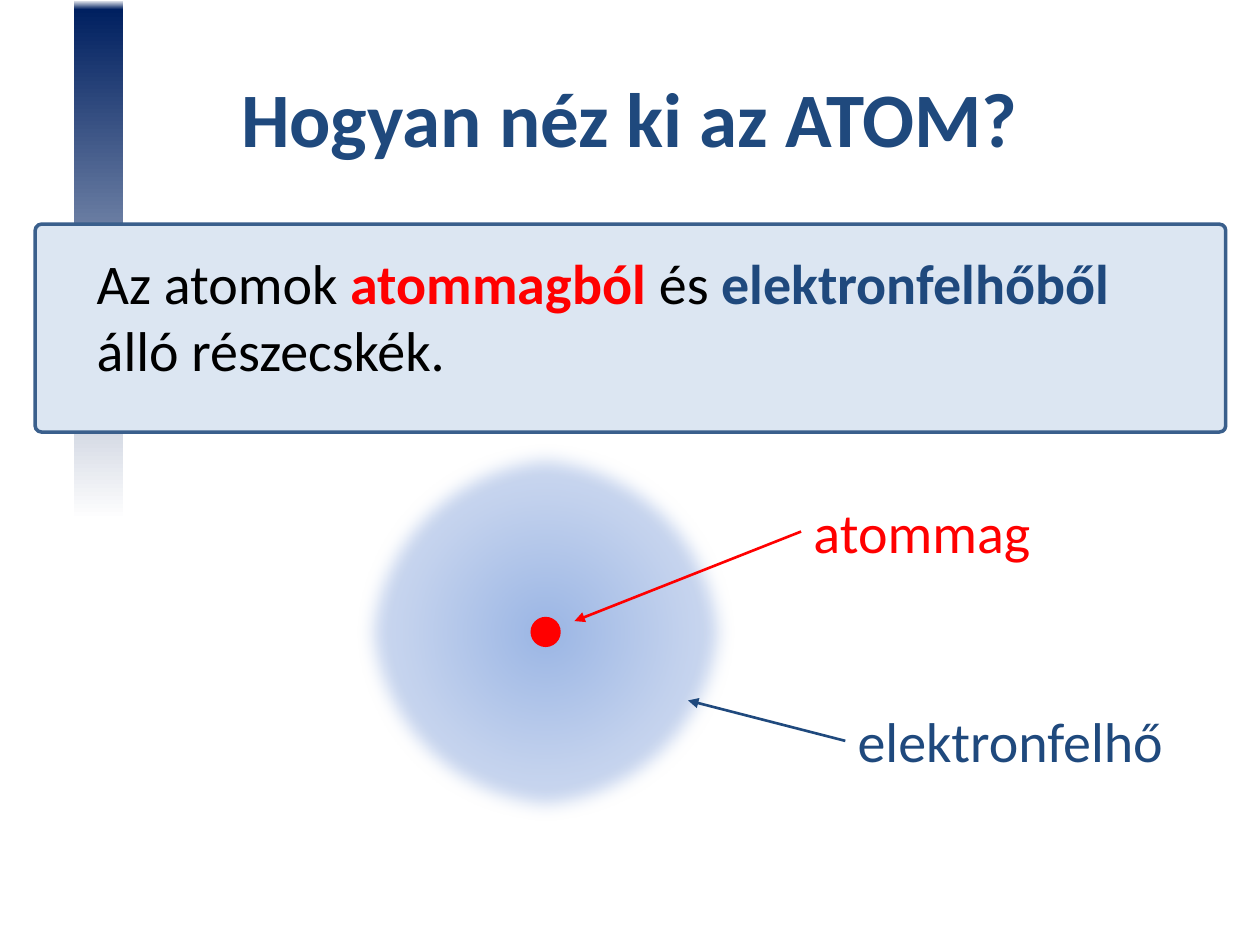
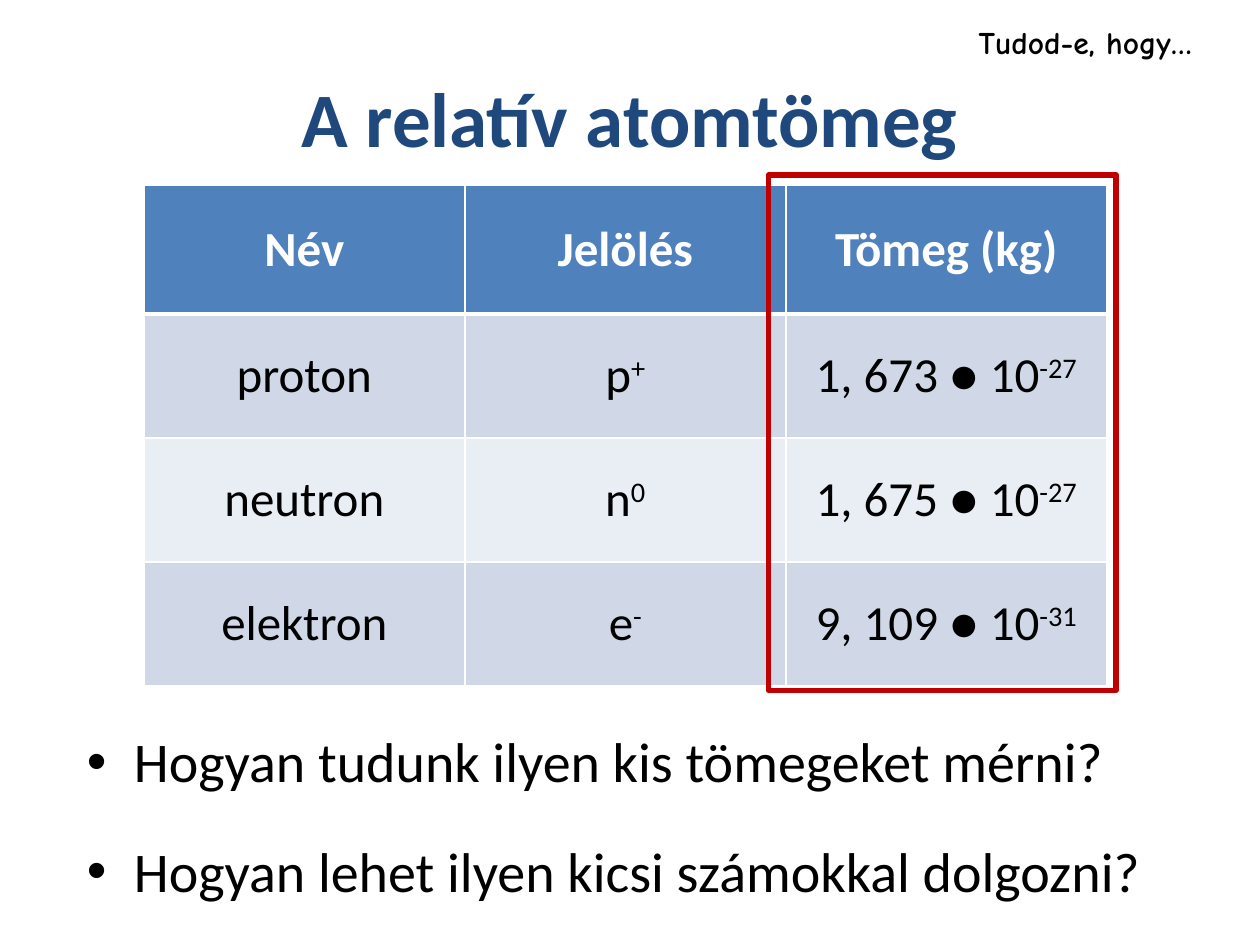
from dataclasses import dataclass
from typing import NamedTuple, Optional

import lxml.etree
import pptx
import pptx.dml.color
import pptx.enum.shapes
import pptx.enum.text
import pptx.oxml.ns
import pptx.util

Cm = pptx.util.Cm
Pt = pptx.util.Pt
SHAPES = pptx.enum.shapes.MSO_SHAPE
ALIGN = pptx.enum.text.PP_ALIGN
ANCHOR = pptx.enum.text.MSO_ANCHOR

COLORS = {
    "black": "000000", "white": "FFFFFF", "red": "FF0000", "blue": "1F497D",
    "navy": "002060", "panel": "DCE6F2", "panel edge": "3A5F8C",
    "cloud core": "9AB5E4", "cloud middle": "C2D1ED", "cloud rim": "E1E8F5",
    "header": "4F81BD", "band dark": "D0D8E8", "band light": "E9EDF4",
    "frame": "C00000",
}
BODY_FONT = "Calibri"
NOTE_FONT = "Comic Neue"
BODY_SIZE = 32


class Area(NamedTuple):
    """Left, top, width and height in centimetres."""
    left: float
    top: float
    width: float
    height: float

    def lengths(self) -> list:
        return [Cm(value) for value in self]


class Span(NamedTuple):
    text: str
    color: str = "black"
    bold: bool = False
    raised: bool = False


@dataclass
class TextStyle:
    size: float = BODY_SIZE
    font: str = BODY_FONT
    align: object = ALIGN.LEFT
    before: float = 0
    after: float = 0
    bullet: Optional[str] = None


@dataclass
class Label:
    """A caption with an arrow from its left edge to the part it names."""
    text: str
    color: str
    area: Area
    target: tuple[float, float]


TITLE_AREA = Area(1.27, 0.76, 22.86, 3.18)
TITLE_STYLE = TextStyle(size=44, align=ALIGN.CENTER)

LABELS = [
    Label("atommag", "red", Area(16.15, 9.9, 4.93, 1.63), (11.58, 12.52)),
    Label("elektronfelhő", "blue", Area(17.04, 14.12, 6.73, 1.63), (13.87, 14.12)),
]

HEADINGS = ["Név", "Jelölés", "Tömeg (kg)"]
PARTICLES = [
    ("proton", "p", "+", "1, 673 ● 10", "-27"),
    ("neutron", "n", "0", "1, 675 ● 10", "-27"),
    ("elektron", "e", "-", "9, 109 ● 10", "-31"),
]
QUESTIONS = [
    "Hogyan tudunk ilyen kis tömegeket mérni?",
    "Hogyan lehet ilyen kicsi számokkal dolgozni?",
]


def rgb(name: str):
    return pptx.dml.color.RGBColor.from_string(COLORS[name])


def add_node(parent, tag: str, **attributes):
    values = {key: str(value) for key, value in attributes.items()}
    return lxml.etree.SubElement(parent, pptx.oxml.ns.qn(tag), values)


def write_spans(para, spans: list[Span], style: TextStyle) -> None:
    para.text = spans[0].text
    for span in spans[1:]:
        para.add_run().text = span.text
    para.alignment = style.align
    para.space_before, para.space_after = Pt(style.before), Pt(style.after)
    for run, span in zip(para.runs, spans):
        run.font.size = Pt(style.size)
        run.font.name = style.font
        run.font.bold = span.bold
        run.font.color.rgb = rgb(span.color)
        if span.raised:
            run.font._element.set("baseline", "30000")
    if style.bullet:
        properties = para._p.get_or_add_pPr()
        indent = Cm(0.95)
        properties.set("marL", str(indent))
        properties.set("indent", str(-indent))
        add_node(properties, "a:buFont", typeface="Arial")
        add_node(properties, "a:buChar", char=style.bullet)


def add_text(page, area: Area, lines: list[list[Span]], style: TextStyle,
             anchor=ANCHOR.TOP, wrap: bool = True):
    box = page.shapes.add_textbox(*area.lengths())
    frame = box.text_frame
    frame.word_wrap = wrap
    frame.vertical_anchor = anchor
    for index, spans in enumerate(lines):
        para = frame.add_paragraph() if index else frame.paragraphs[0]
        write_spans(para, spans, style)
    return box


def add_title(page, text: str) -> None:
    add_text(page, TITLE_AREA, [[Span(text, "blue", True)]], TITLE_STYLE, ANCHOR.MIDDLE)


def add_figure(shapes, kind, area: Area, fill: Optional[str] = None,
               line: Optional[str] = None, width: float = 0):
    figure = shapes.add_shape(kind, *area.lengths())
    figure.shadow.inherit = False
    if fill:
        figure.fill.solid()
        figure.fill.fore_color.rgb = rgb(fill)
    else:
        figure.fill.background()
    if line:
        figure.line.color.rgb = rgb(line)
        figure.line.width = Pt(width)
    else:
        figure.line.fill.background()
    return figure


def set_gradient(figure, stops: list[tuple[int, str]], angle: Optional[int] = None) -> None:
    """Give a linear gradient, or one spreading from the centre without an angle."""
    properties = figure._element.spPr
    gradient = add_node(properties, "a:gradFill", rotWithShape=1)
    stop_list = add_node(gradient, "a:gsLst")
    for position, color in stops:
        stop = add_node(stop_list, "a:gs", pos=position * 1000)
        add_node(stop, "a:srgbClr", val=COLORS[color])
    if angle is None:
        circle = add_node(gradient, "a:path", path="circle")
        add_node(circle, "a:fillToRect", l=50000, t=50000, r=50000, b=50000)
    else:
        add_node(gradient, "a:lin", ang=angle * 60000, scaled=0)
    properties.replace(properties.find(pptx.oxml.ns.qn("a:noFill")), gradient)


def soften_edge(figure, radius: int) -> None:
    effects = figure._element.spPr.find(pptx.oxml.ns.qn("a:effectLst"))
    add_node(effects, "a:softEdge", rad=radius)


def add_label(page, label: Label) -> None:
    add_text(page, label.area, [[Span(label.text, label.color)]], TextStyle(), wrap=False)
    start = (label.area.left, label.area.top + label.area.height / 2)
    arrow = page.shapes.add_connector(
        pptx.enum.shapes.MSO_CONNECTOR.STRAIGHT,
        *[Cm(value) for value in start + label.target])
    arrow.line.color.rgb = rgb(label.color)
    arrow.line.width = Pt(1.5)
    add_node(arrow.line._get_or_add_ln(), "a:tailEnd", type="triangle")
    add_node(arrow._element.spPr, "a:effectLst")


def add_atom(page) -> None:
    atom = page.shapes.add_group_shape()
    center_x, center_y = 11.0, 12.74

    def add_disc(diameter: float, fill: Optional[str] = None):
        area = Area(center_x - diameter / 2, center_y - diameter / 2, diameter, diameter)
        return add_figure(atom.shapes, SHAPES.OVAL, area, fill)

    cloud = add_disc(7.65)
    set_gradient(cloud, [(0, "cloud core"), (50, "cloud middle"), (100, "cloud rim")])
    soften_edge(cloud, Pt(10))
    add_disc(0.61, "red")


def set_borders(cell, bottom: float) -> None:
    properties = cell._tc.get_or_add_tcPr()
    widths = {"a:lnL": 1, "a:lnR": 1, "a:lnT": 1, "a:lnB": bottom}
    for index, (tag, width) in enumerate(widths.items()):
        border = add_node(properties, tag, w=Pt(width))
        add_node(add_node(border, "a:solidFill"), "a:srgbClr", val=COLORS["white"])
        properties.insert(index, border)


def add_particle_table(page) -> None:
    rows = [[[Span(heading, "white", True)] for heading in HEADINGS]]
    for name, symbol, charge, mass, power in PARTICLES:
        rows.append([[Span(name)],
                     [Span(symbol), Span(charge, raised=True)],
                     [Span(mass), Span(power, raised=True)]])
    area = Area(2.9, 3.73, 19.41, 10.11)
    table = page.shapes.add_table(len(rows), len(HEADINGS), *area.lengths()).table
    for column in table.columns:
        column.width = Cm(area.width / len(HEADINGS))
    style = TextStyle(size=28, align=ALIGN.CENTER)
    for row_index, row in enumerate(rows):
        table.rows[row_index].height = Cm(2.5 if row_index else 2.6)
        fill = ("band dark" if row_index % 2 else "band light") if row_index else "header"
        for column_index, spans in enumerate(row):
            cell = table.cell(row_index, column_index)
            cell.fill.solid()
            cell.fill.fore_color.rgb = rgb(fill)
            cell.vertical_anchor = ANCHOR.MIDDLE
            write_spans(cell.text_frame.paragraphs[0], spans, style)
            set_borders(cell, 1 if row_index else 3)


def build_atom_page(page) -> None:
    bar = add_figure(page.shapes, SHAPES.RECTANGLE, Area(1.5, 0, 0.99, 19.05))
    set_gradient(bar, [(45, "white"), (99, "navy"), (100, "white")], angle=270)
    panel = add_figure(page.shapes, SHAPES.ROUNDED_RECTANGLE, Area(0.71, 4.52, 24, 4.19),
                       "panel", "panel edge", 2)
    panel.adjustments[0] = 0.03
    add_title(page, "Hogyan néz ki az ATOM?")
    definition = [Span("Az atomok "), Span("atommagból ", "red", True), Span("és "),
                  Span("elektronfelhőből ", "blue", True), Span("álló részecskék.")]
    add_text(page, Area(1.7, 4.88, 22, 4.06), [definition], TextStyle(before=6.4))
    add_atom(page)
    for label in LABELS:
        add_label(page, label)


def build_mass_page(page) -> None:
    add_title(page, "A relatív atomtömeg")
    add_text(page, Area(1.5, 14.53, 22.4, 4.52), [[Span(text)] for text in QUESTIONS],
             TextStyle(before=12, after=12, bullet="•"))
    add_particle_table(page)
    add_figure(page.shapes, SHAPES.RECTANGLE, Area(15.49, 3.53, 7.01, 10.39),
               line="frame", width=3)
    add_text(page, Area(19.48, 0.33, 4.88, 1.02), [[Span("Tudod-e, hogy…", bold=True)]],
             TextStyle(size=18, font=NOTE_FONT), wrap=False)


def main() -> None:
    deck = pptx.Presentation()
    deck.slide_width, deck.slide_height = Cm(25.4), Cm(19.05)
    blank = deck.slide_layouts[6]
    for build in (build_atom_page, build_mass_page):
        build(deck.slides.add_slide(blank))
    deck.save("out.pptx")


if __name__ == "__main__":
    main()
